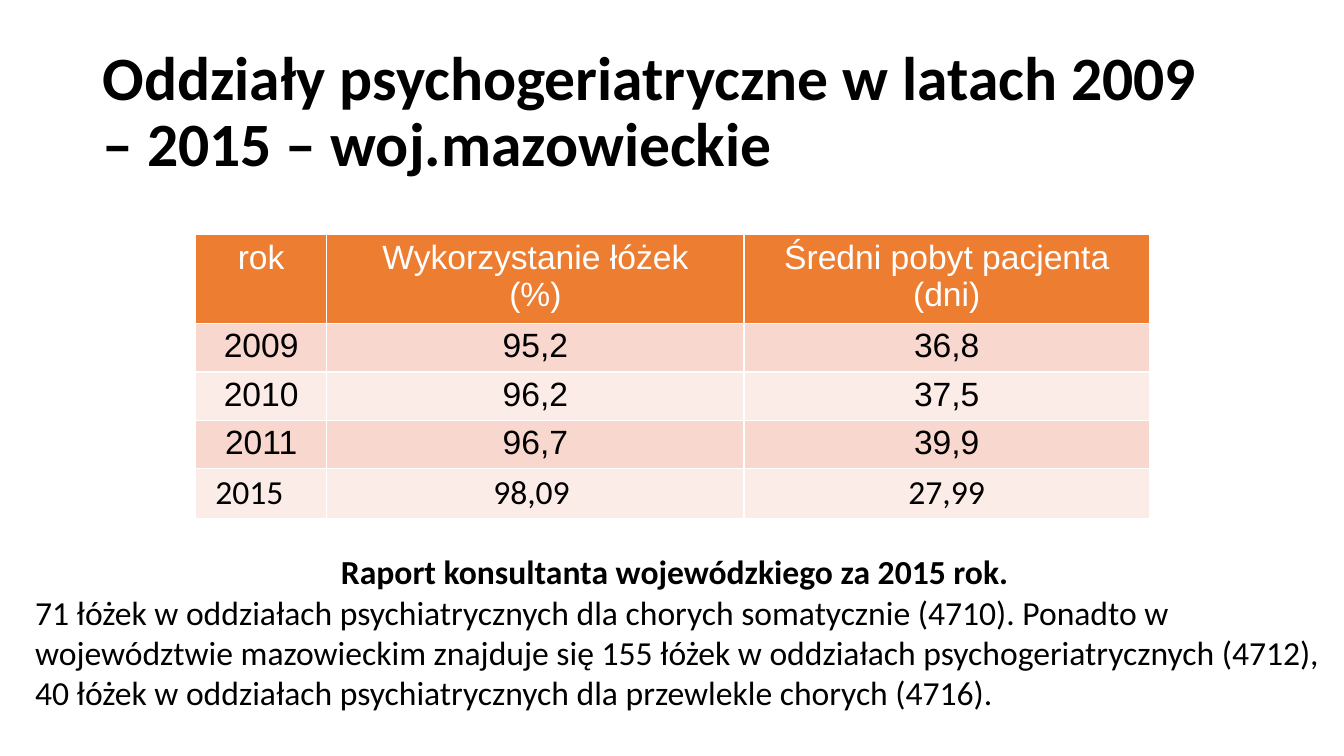
from lxml import etree
from pptx import Presentation
from pptx.dml.color import RGBColor
from pptx.enum.text import MSO_ANCHOR, PP_ALIGN
from pptx.oxml.ns import qn
from pptx.util import Emu, Pt

PX = 9144
LEFT, CENTER, RIGHT = PP_ALIGN.LEFT, PP_ALIGN.CENTER, PP_ALIGN.RIGHT
TOP, MIDDLE = MSO_ANCHOR.TOP, MSO_ANCHOR.MIDDLE

BLACK = RGBColor(0x00, 0x00, 0x00)
WHITE = RGBColor(0xFF, 0xFF, 0xFF)
ORANGE = RGBColor(0xED, 0x7D, 0x31)
DARK_BAND = RGBColor(0xF8, 0xD7, 0xCE)
LIGHT_BAND = RGBColor(0xFC, 0xEC, 0xE8)

TITLE = "Oddziały psychogeriatryczne w latach 2009 – 2015 – woj.mazowieckie"
REPORT_HEADING = "Raport konsultanta wojewódzkiego za 2015 rok. "
REPORT_BODY = (
    "71 łóżek w oddziałach psychiatrycznych dla chorych somatycznie (4710). "
    "Ponadto w województwie mazowieckim znajduje się 155 łóżek w oddziałach "
    "psychogeriatrycznych (4712), 40 łóżek w oddziałach psychiatrycznych "
    "dla przewlekle chorych (4716)."
)
HEADERS = [["rok"], ["Wykorzystanie łóżek", "(%)"], ["Średni pobyt pacjenta (dni)"]]
YEARS = [
    ("2009", "95,2", "36,8"),
    ("2010", "96,2", "37,5"),
    ("2011", "96,7", "39,9"),
    ("2015", "98,09 ", "27,99"),
]
COLUMN_WIDTHS = [130, 414, 402]
ROW_HEIGHTS = [84, 47, 47, 47, 50]


def px(*lengths):
    return [Emu(length * PX) for length in lengths]


def write(frame, index, text, size, font, color, bold=False, align=LEFT):
    paragraph = frame.add_paragraph() if index else frame.paragraphs[0]
    paragraph.alignment = align
    run = paragraph.add_run()
    run.text = text
    run.font.size = Pt(size)
    run.font.name = font
    run.font.bold = bold
    run.font.color.rgb = color
    return paragraph


def add_text_frame(slide, left, top, width, height, anchor=TOP):
    frame = slide.shapes.add_textbox(*px(left, top, width, height)).text_frame
    frame.word_wrap = True
    frame.vertical_anchor = anchor
    return frame


def draw_borders(cell, color):
    properties = cell._tc.get_or_add_tcPr()
    for position, side in enumerate(("lnL", "lnR", "lnT", "lnB")):
        border = etree.Element(qn(f"a:{side}"), w=str(Pt(1)))
        fill = etree.SubElement(border, qn("a:solidFill"))
        etree.SubElement(fill, qn("a:srgbClr"), val=str(color))
        properties.insert(position, border)


def fill_cell(cell, lines, font, color, background, align=CENTER):
    cell.margin_top, cell.margin_bottom = px(4, 4)
    cell.fill.solid()
    cell.fill.fore_color.rgb = background
    draw_borders(cell, WHITE)
    for index, line in enumerate(lines):
        write(cell.text_frame, index, line, 24, font, color, align=align)


def add_occupancy_table(slide):
    table = slide.shapes.add_table(
        len(ROW_HEIGHTS), len(COLUMN_WIDTHS),
        *px(194, 233, sum(COLUMN_WIDTHS), sum(ROW_HEIGHTS)),
    ).table
    for column, width in zip(table.columns, px(*COLUMN_WIDTHS)):
        column.width = width
    for row, height in zip(table.rows, px(*ROW_HEIGHTS)):
        row.height = height
    for column, lines in enumerate(HEADERS):
        fill_cell(table.cell(0, column), lines, "Arial", WHITE, ORANGE)
    for row, values in enumerate(YEARS, start=1):
        band = DARK_BAND if row % 2 else LIGHT_BAND
        latest = row == len(YEARS)
        font = "Calibri" if latest else "Arial"
        for column, value in enumerate(values):
            align = RIGHT if latest and column == 0 else CENTER
            fill_cell(table.cell(row, column), [value], font, BLACK, band, align)
    table.cell(len(YEARS), 0).margin_right = px(43)[0]


def main():
    presentation = Presentation()
    presentation.slide_width, presentation.slide_height = px(1333, 750)
    slide = presentation.slides.add_slide(presentation.slide_layouts[6])

    title = add_text_frame(slide, 92, 40, 1150, 145, MIDDLE)
    write(title, 0, TITLE, 44, "Calibri", BLACK, bold=True).line_spacing = 0.9

    add_occupancy_table(slide)

    report = add_text_frame(slide, 25, 542, 1296, 172)
    write(report, 0, REPORT_HEADING, 24, "Calibri", BLACK, bold=True, align=CENTER)
    write(report, 1, REPORT_BODY, 24, "Calibri", BLACK)

    presentation.save("out.pptx")


if __name__ == "__main__":
    main()
